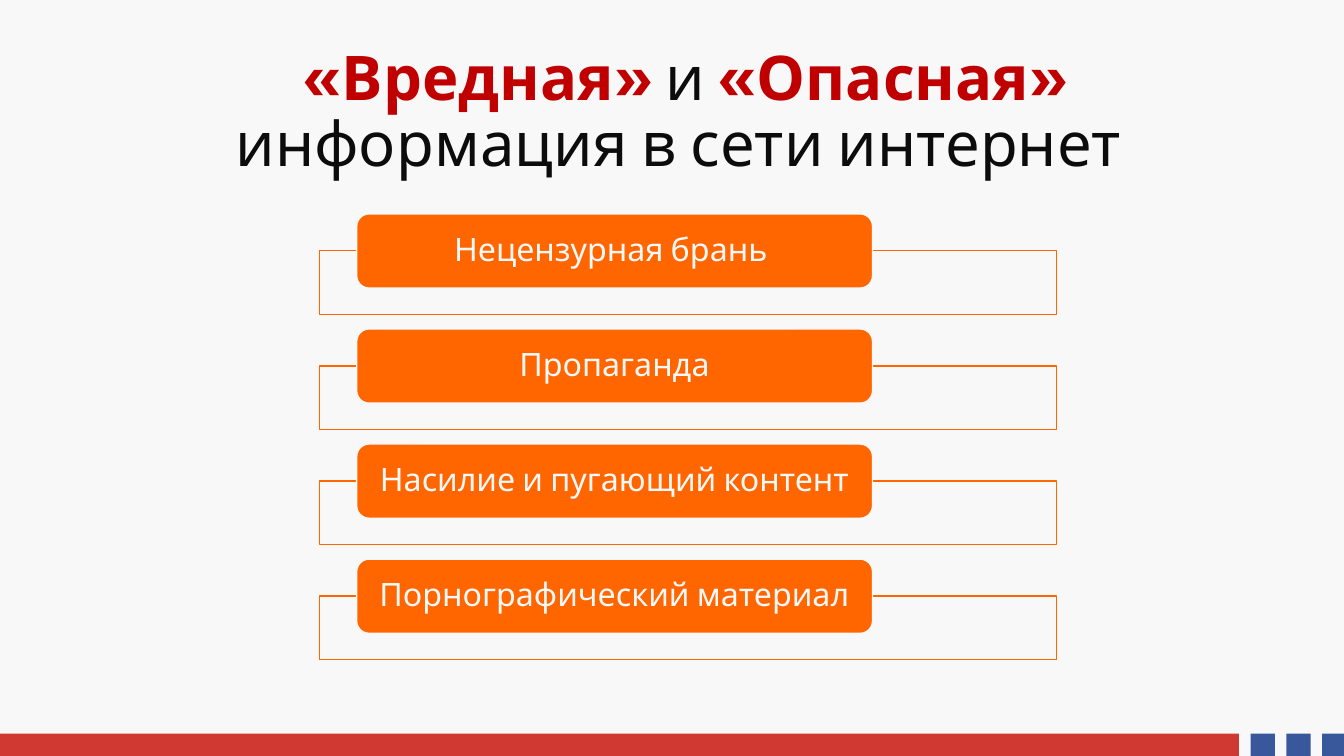
from dataclasses import dataclass

from lxml import etree
from pptx import Presentation
from pptx import util as u
from pptx.dml.color import RGBColor
from pptx.enum import shapes, text
from pptx.oxml import ns


@dataclass(frozen=True)
class Theme:
    font: str = "Cabin"
    page: str = "F8F8F8"
    ink: str = "0C0C0C"
    accent: str = "C00000"
    pale: str = "FAF9F9"
    orange: str = "FF6600"
    red: str = "C70A00"
    blue: str = "0A3085"
    title_size: int = 44
    label_size: int = 23


@dataclass(frozen=True)
class Box:
    left: float
    top: float
    width: float
    height: float

    def lengths(self):
        return [u.Cm(n) for n in (self.left, self.top, self.width, self.height)]


THEME = Theme()
PAGE = Box(0, 0, 33.87, 19.05)
TITLE = Box(3.33, 1.02, 27.91, 3.68)
LIST = Box(8.05, 5.39, 18.57, 11.22)
FOOTER = Box(0, 18.49, 33.87, 0.56)
TOPICS = [
    "Нецензурная брань ",
    "Пропаганда",
    "Насилие и пугающий контент ",
    "Порнографический материал ",
]


def add_panel(page, kind, box, fill, line=None, alpha=100):
    panel = page.shapes.add_shape(kind, *box.lengths())
    panel.shadow.inherit = False
    panel.fill.solid()
    panel.fill.fore_color.rgb = RGBColor.from_string(fill)
    if alpha < 100:
        color = panel.fill._xPr.find(".//" + ns.qn("a:srgbClr"))
        etree.SubElement(color, ns.qn("a:alpha"), val=str(alpha * 1000))
    if line:
        panel.line.color.rgb = RGBColor.from_string(line)
        panel.line.width = u.Pt(1)
    else:
        panel.line.fill.background()
    return panel


def write_text(shape, spans, size, inset=(0.25, 0.13)):
    frame = shape.text_frame
    frame.word_wrap = True
    frame.auto_size = text.MSO_AUTO_SIZE.NONE
    frame.vertical_anchor = text.MSO_ANCHOR.MIDDLE
    frame.margin_left = frame.margin_right = u.Cm(inset[0])
    frame.margin_top = frame.margin_bottom = u.Cm(inset[1])
    para = frame.paragraphs[0]
    para.alignment = text.PP_ALIGN.CENTER
    para.line_spacing = 0.9
    for words, color, bold in spans:
        span = para.add_run()
        span.text = words
        span.font.name = THEME.font
        span.font.size = u.Pt(size)
        span.font.bold = bold
        span.font.color.rgb = RGBColor.from_string(color)


def place_title(page, box):
    title = page.shapes.title
    title.left, title.top, title.width, title.height = box.lengths()
    spans = [
        ("«Вредная» ", THEME.accent, True),
        ("и ", THEME.ink, False),
        ("«Опасная» ", THEME.accent, True),
        ("информация в сети интернет ", THEME.ink, False),
    ]
    write_text(title, spans, THEME.title_size)


def place_topics(page, box, topics):
    pitch = 2.9
    for index, topic in enumerate(topics):
        top = box.top + index * pitch
        frame = Box(box.left, top + 0.93, box.width, 1.6)
        label = Box(box.left + 0.94, top, 13, 1.87)
        add_panel(page, shapes.MSO_SHAPE.RECTANGLE, frame, THEME.pale, THEME.orange, 90)
        pill = add_panel(page, shapes.MSO_SHAPE.ROUNDED_RECTANGLE, label,
                         THEME.orange, THEME.pale)
        write_text(pill, [(topic, THEME.pale, False)], THEME.label_size, (0.48, 0))


def place_footer(page, box):
    bar = Box(box.left, box.top, 31.22, box.height)
    add_panel(page, shapes.MSO_SHAPE.RECTANGLE, bar, THEME.red, alpha=80)
    for index in range(3):
        left = box.left + 31.52 + index * 0.9
        width = min(0.61, box.left + box.width - left)
        square = Box(left, box.top, width, box.height)
        add_panel(page, shapes.MSO_SHAPE.RECTANGLE, square, THEME.blue, alpha=80)


def main():
    deck = Presentation()
    deck.slide_width, deck.slide_height = u.Cm(PAGE.width), u.Cm(PAGE.height)
    page = deck.slides.add_slide(deck.slide_layouts.get_by_name("Title Only"))
    page.background.fill.solid()
    page.background.fill.fore_color.rgb = RGBColor.from_string(THEME.page)
    place_footer(page, FOOTER)
    place_title(page, TITLE)
    place_topics(page, LIST, TOPICS)
    deck.save("out.pptx")


if __name__ == "__main__":
    main()
